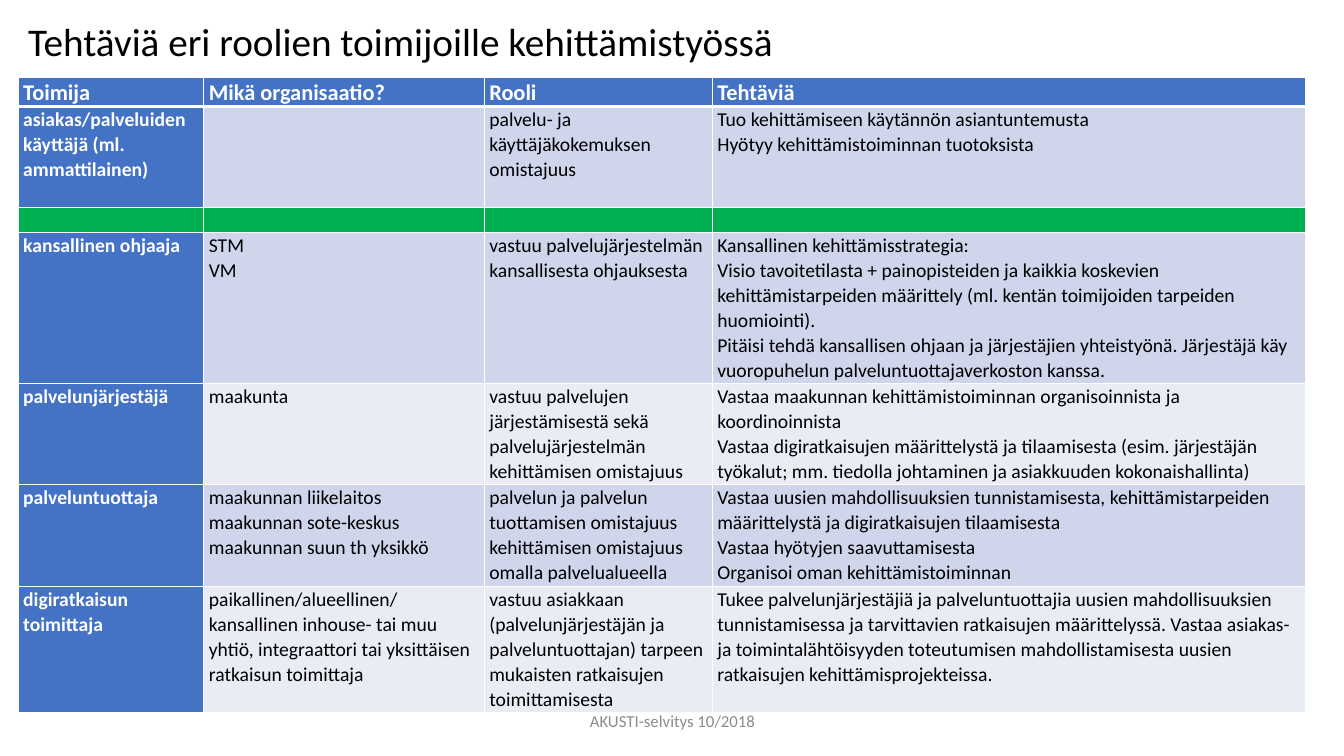
"""Build a slide that tabulates the development tasks of each kind of actor."""
from dataclasses import dataclass

from lxml.etree import SubElement
from pptx import Presentation
from pptx.dml.color import RGBColor
from pptx.enum.text import MSO_ANCHOR, MSO_AUTO_SIZE, PP_ALIGN
from pptx.oxml.ns import qn
from pptx.slide import Slide
from pptx.table import _Cell
from pptx.text.text import _Paragraph
from pptx.util import Inches, Pt

WIDTH, HEIGHT = Inches(13.33), Inches(7.5)


@dataclass(frozen=True)
class Theme:
    font: str = "Calibri"
    ink: str = "000000"
    white: str = "FFFFFF"
    accent: str = "4472C4"
    divider: str = "00B050"
    band_dark: str = "CFD5EA"
    band_light: str = "E9EBF5"
    muted: str = "8C8C8C"
    title_size: int = 28
    head_size: int = 16
    body_size: int = 14
    footer_size: int = 12
    line_spacing: float = 1.05
    rule: int = 1
    head_rule: int = 3


@dataclass(frozen=True)
class Area:
    """A box in percent of the slide's width and height."""
    left: float
    top: float
    width: float
    height: float

    def emu(self) -> tuple[int, int, int, int]:
        return (round(WIDTH * self.left / 100), round(HEIGHT * self.top / 100),
                round(WIDTH * self.width / 100), round(HEIGHT * self.height / 100))


@dataclass(frozen=True)
class Style:
    size: int
    color: str
    bold: bool = False


@dataclass(frozen=True)
class Caption:
    text: str
    area: Area
    style: Style
    align: PP_ALIGN
    anchor: MSO_ANCHOR
    auto_size: MSO_AUTO_SIZE


@dataclass(frozen=True)
class Row:
    share: int
    fill: str
    cells: tuple[str, str, str, str]


T = Theme()
HEAD = Style(T.head_size, T.white, True)
ACTOR = Style(T.body_size, T.white, True)
BODY = Style(T.body_size, T.ink)

CAPTIONS = (
    Caption("Tehtäviä eri roolien toimijoille kehittämistyössä",
            Area(1.35, 1.6, 66.6, 7.6), Style(T.title_size, T.ink),
            PP_ALIGN.LEFT, MSO_ANCHOR.TOP, MSO_AUTO_SIZE.SHAPE_TO_FIT_TEXT),
    Caption("AKUSTI-selvitys 10/2018",
            Area(33.16, 92.67, 33.76, 5.33), Style(T.footer_size, T.muted),
            PP_ALIGN.CENTER, MSO_ANCHOR.MIDDLE, MSO_AUTO_SIZE.NONE),
)

TABLE = Area(1.35, 10.27, 95.8, 83.87)
COLUMN_SHARES = (184, 278, 226, 588)
ROWS = (
    Row(28, T.accent, ("Toimija", "Mikä organisaatio?", "Rooli", "Tehtäviä")),
    Row(100, T.band_dark, (
        "asiakas/palveluiden käyttäjä (ml. ammattilainen)",
        "",
        "palvelu- ja käyttäjäkokemuksen omistajuus",
        "Tuo kehittämiseen käytännön asiantuntemusta\n"
        "Hyötyy kehittämistoiminnan tuotoksista")),
    Row(25, T.divider, ("", "", "", "")),
    Row(150, T.band_dark, (
        "kansallinen ohjaaja",
        "STM\nVM",
        "vastuu palvelujärjestelmän kansallisesta ohjauksesta",
        "Kansallinen kehittämisstrategia:\n"
        "Visio tavoitetilasta + painopisteiden ja kaikkia koskevien "
        "kehittämistarpeiden määrittely (ml. kentän toimijoiden tarpeiden huomiointi).\n"
        "Pitäisi tehdä kansallisen ohjaan ja järjestäjien yhteistyönä. "
        "Järjestäjä käy vuoropuhelun palveluntuottajaverkoston kanssa.")),
    Row(100, T.band_light, (
        "palvelunjärjestäjä",
        "maakunta",
        "vastuu palvelujen järjestämisestä sekä palvelujärjestelmän "
        "kehittämisen omistajuus",
        "Vastaa maakunnan kehittämistoiminnan organisoinnista ja koordinoinnista\n"
        "Vastaa digiratkaisujen määrittelystä ja tilaamisesta (esim. järjestäjän "
        "työkalut; mm. tiedolla johtaminen ja asiakkuuden kokonaishallinta)")),
    Row(101, T.band_dark, (
        "palveluntuottaja",
        "maakunnan liikelaitos\nmaakunnan sote-keskus\nmaakunnan suun th yksikkö",
        "palvelun ja palvelun tuottamisen omistajuus\n"
        "kehittämisen omistajuus omalla palvelualueella",
        "Vastaa uusien mahdollisuuksien tunnistamisesta, kehittämistarpeiden "
        "määrittelystä ja digiratkaisujen tilaamisesta\n"
        "Vastaa hyötyjen saavuttamisesta\n"
        "Organisoi oman kehittämistoiminnan")),
    Row(125, T.band_light, (
        "digiratkaisun toimittaja",
        "paikallinen/alueellinen/kansallinen inhouse- tai muu yhtiö, "
        "integraattori tai yksittäisen ratkaisun toimittaja",
        "vastuu asiakkaan (palvelunjärjestäjän ja palveluntuottajan) tarpeen "
        "mukaisten ratkaisujen toimittamisesta",
        "Tukee palvelunjärjestäjiä ja palveluntuottajia uusien mahdollisuuksien "
        "tunnistamisessa ja tarvittavien ratkaisujen määrittelyssä. Vastaa asiakas- "
        "ja toimintalähtöisyyden toteutumisen mahdollistamisesta uusien ratkaisujen "
        "kehittämisprojekteissa.")),
)


def add_run(p: _Paragraph, text: str, style: Style) -> None:
    r = p.add_run()
    r.text = text
    r.font.name = T.font
    r.font.size = Pt(style.size)
    r.font.bold = style.bold
    r.font.color.rgb = RGBColor.from_string(style.color)


def add_caption(s: Slide, caption: Caption) -> None:
    tf = s.shapes.add_textbox(*caption.area.emu()).text_frame
    tf.word_wrap = True
    tf.auto_size = caption.auto_size
    tf.vertical_anchor = caption.anchor
    p = tf.paragraphs[0]
    p.alignment = caption.align
    add_run(p, caption.text, caption.style)


def set_borders(cell: _Cell, top: int, bottom: int) -> None:
    tc_pr = cell._tc.get_or_add_tcPr()
    widths = {"a:lnL": T.rule, "a:lnR": T.rule, "a:lnT": top, "a:lnB": bottom}
    for tag, width in widths.items():
        ln = SubElement(tc_pr, qn(tag), w=str(Pt(width)))
        SubElement(SubElement(ln, qn("a:solidFill")), qn("a:srgbClr"), val=T.white)


def fill_cell(cell: _Cell, text: str, style: Style, fill: str) -> None:
    cell.margin_left = cell.margin_right = Inches(0.05)
    cell.margin_top = cell.margin_bottom = 0
    cell.fill.solid()
    cell.fill.fore_color.rgb = RGBColor.from_string(fill)
    tf = cell.text_frame
    for i, line in enumerate(text.split("\n")):
        p = tf.add_paragraph() if i else tf.paragraphs[0]
        p.line_spacing = T.line_spacing
        if line:
            add_run(p, line, style)
        else:
            SubElement(p._p, qn("a:endParaRPr"), sz=str(style.size * 100))


def add_roles_table(s: Slide) -> None:
    area = TABLE.emu()
    table = s.shapes.add_table(len(ROWS), len(COLUMN_SHARES), *area).table
    table.horz_banding = False
    for column, share in zip(table.columns, COLUMN_SHARES):
        column.width = round(area[2] * share / sum(COLUMN_SHARES))
    total = sum(row.share for row in ROWS)
    for i, row in enumerate(ROWS):
        table.rows[i].height = round(area[3] * row.share / total)
        for j, text in enumerate(row.cells):
            cell = table.cell(i, j)
            style = HEAD if i == 0 else ACTOR if j == 0 else BODY
            fill = T.accent if j == 0 and any(row.cells) else row.fill
            set_borders(cell, T.head_rule if i == 1 else T.rule,
                        T.head_rule if i == 0 else T.rule)
            fill_cell(cell, text, style, fill)


def main() -> None:
    prs = Presentation()
    prs.slide_width, prs.slide_height = WIDTH, HEIGHT
    s = prs.slides.add_slide(prs.slide_layouts[6])
    add_roles_table(s)
    for caption in CAPTIONS:
        add_caption(s, caption)
    prs.save("out.pptx")


if __name__ == "__main__":
    main()
